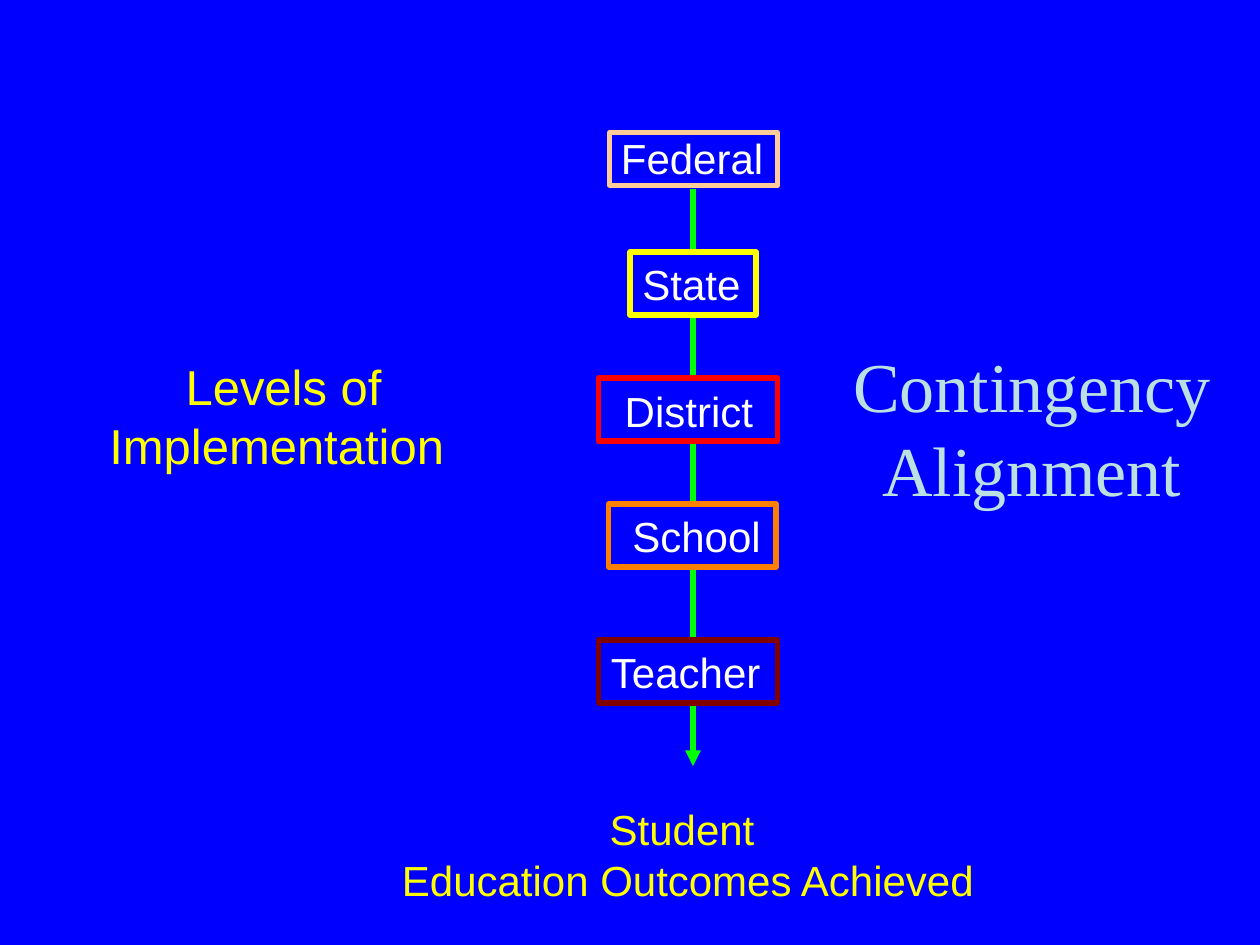
from dataclasses import dataclass

from lxml import etree
from pptx import Presentation
from pptx import util as u
from pptx.dml.color import RGBColor
from pptx.enum import shapes, text
from pptx.oxml import ns


@dataclass(frozen=True)
class Theme:
    background: str = "0000FF"
    label: str = "FFFFFF"
    accent: str = "FFFF00"
    heading: str = "BBE0E3"
    arrow: str = "00FF00"
    sans: str = "Arial"
    serif: str = "Times New Roman"
    body_size: int = 24
    title_size: int = 28
    heading_size: int = 40
    line_width: int = 3


THEME = Theme()

LEVELS = [
    ("Federal", "FFCC99", (4.84, 1.05, 1.33, 0.42), (4.83, 1, 1.33, 0.5)),
    ("State", "FFFF00", (5, 2, 1, 0.5), (5, 2, 0.98, 0.5)),
    ("District", "FF0000", (4.75, 3, 1.42, 0.5), (4.86, 3.01, 1.22, 0.5)),
    ("School", "FF8000", (4.83, 4, 1.33, 0.5), (4.92, 4, 1.22, 0.5)),
    ("Teacher", "800000", (4.75, 5.08, 1.42, 0.5), (4.75, 5.08, 1.42, 0.5)),
]


def rgb(value):
    return RGBColor.from_string(value)


def inches(values):
    return [u.Inches(v) for v in values]


def add_text(s, box, content, size, color, font=THEME.sans,
             align=text.PP_ALIGN.CENTER, anchor=text.MSO_ANCHOR.TOP, wrap=True):
    tf = s.shapes.add_textbox(*inches(box)).text_frame
    tf.word_wrap = wrap
    tf.vertical_anchor = anchor
    tf.text = content
    for p in tf.paragraphs:
        p.alignment = align
        for r in p.runs:
            r.font.name = font
            r.font.size = u.Pt(size)
            r.font.color.rgb = rgb(color)


def add_frame(s, box, color):
    sp = s.shapes.add_shape(shapes.MSO_SHAPE.RECTANGLE, *inches(box))
    sp.shadow.inherit = False
    sp.fill.solid()
    sp.fill.fore_color.rgb = rgb(THEME.background)
    sp.line.color.rgb = rgb(color)
    sp.line.width = u.Pt(THEME.line_width)


def add_arrow(s, start, end):
    line = s.shapes.add_connector(
        shapes.MSO_CONNECTOR.STRAIGHT, *inches(start + end))
    line.line.color.rgb = rgb(THEME.arrow)
    line.line.width = u.Pt(THEME.line_width)
    props = line.element.spPr
    etree.SubElement(props.find(ns.qn("a:ln")), ns.qn("a:tailEnd"), type="triangle")
    etree.SubElement(props, ns.qn("a:effectLst"))


def main():
    prs = Presentation()
    prs.slide_width = u.Inches(10)
    prs.slide_height = u.Inches(7.5)
    s = prs.slides.add_slide(prs.slide_layouts[6])
    s.background.fill.solid()
    s.background.fill.fore_color.rgb = rgb(THEME.background)

    add_arrow(s, (5.5, 1.5), (5.5, 6.08))
    for name, color, frame, label in LEVELS:
        add_frame(s, frame, color)
        add_text(s, label, name, THEME.body_size, THEME.label,
                 align=text.PP_ALIGN.LEFT, wrap=False)

    add_text(s, (3.08, 6.33, 4.76, 0.9), "Student \nEducation Outcomes Achieved",
             THEME.body_size, THEME.accent)
    add_text(s, (6.67, 2.67, 3.04, 1.43), "Contingency\nAlignment",
             THEME.heading_size, THEME.heading, THEME.serif)
    add_text(s, (0.75, 2.67, 3, 1.25), "Levels of Implementation ",
             THEME.title_size, THEME.accent, anchor=text.MSO_ANCHOR.MIDDLE)
    prs.save("out.pptx")


if __name__ == "__main__":
    main()
